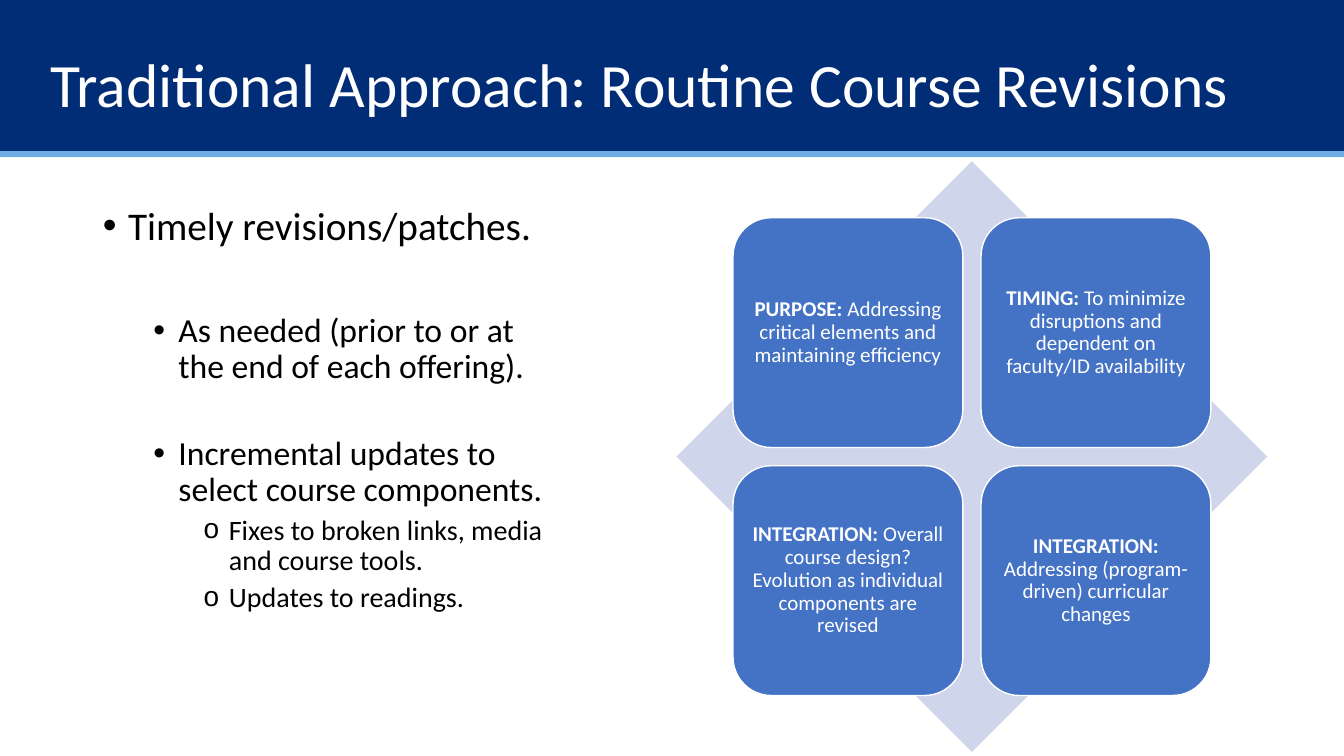
import pptx
import pptx.util
import pptx.dml.color
import pptx.enum.shapes
import pptx.enum.text
import pptx.oxml.ns
from lxml import etree

Inches, Pt = pptx.util.Inches, pptx.util.Pt
SHAPE = pptx.enum.shapes.MSO_SHAPE
ALIGN = pptx.enum.text.PP_ALIGN
ANCHOR = pptx.enum.text.MSO_ANCHOR

COLORS = {
    "navy": "002D75",
    "sky": "6DADE4",
    "diamond": "CFD5EA",
    "card": "4472C4",
    "white": "FFFFFF",
    "black": "000000",
}
TITLE = "Traditional Approach: Routine Course Revisions"
# level, text, space before in points
REVISIONS = [
    (0, "Timely revisions/patches.", 0),
    (1, "As needed (prior to or at the end of each offering).", 46),
    (1, "Incremental updates to select course components.", 36),
    (2, "Fixes to broken links, media and course tools.", 5),
    (2, "Updates to readings.", 5),
]
# size, left margin in inches, bullet for each level
LEVELS = [(28, 0.25, "•"), (24, 0.75, "•"), (20, 1.25, "o")]
HANGING = 0.25
CARDS = [
    ("PURPOSE:", " Addressing critical elements and maintaining efficiency"),
    ("TIMING:", " To minimize disruptions and dependent on faculty/ID availability"),
    ("INTEGRATION:", " Overall course design? Evolution as individual components are revised"),
    ("INTEGRATION:", " Addressing (program-driven) curricular changes"),
]


def color(name):
    return pptx.dml.color.RGBColor.from_string(COLORS[name])


def place(shape, left, top, width, height):
    shape.left, shape.top = Inches(left), Inches(top)
    shape.width, shape.height = Inches(width), Inches(height)


def style(paragraph, size, color_name):
    paragraph.line_spacing = 0.9
    paragraph.font.name = "Calibri"
    paragraph.font.size = Pt(size)
    paragraph.font.color.rgb = color(color_name)


def add_filled(slide, kind, box, fill):
    shape = slide.shapes.add_shape(kind, *map(Inches, box))
    shape.shadow.inherit = False
    shape.fill.solid()
    shape.fill.fore_color.rgb = color(fill)
    shape.line.fill.background()
    return shape


def add_bullet(paragraph, margin, symbol):
    properties = paragraph._p.get_or_add_pPr()
    properties.set("marL", str(Inches(margin)))
    properties.set("indent", str(-Inches(HANGING)))
    bullet = etree.SubElement(properties, pptx.oxml.ns.qn("a:buChar"))
    bullet.set("char", symbol)


def add_banner(slide, left, top, width, height):
    """Draw the header band and its rule behind the placeholders."""
    band = add_filled(slide, SHAPE.RECTANGLE, (left, top, width, height), "navy")
    rule = add_filled(slide, SHAPE.RECTANGLE, (left, top + height, width, 0.06), "sky")
    for back in (rule, band):
        slide.shapes._spTree.insert(2, back._element)


def fill_title(slide, *box):
    title = slide.shapes.title
    place(title, *box)
    frame = title.text_frame
    frame.auto_size = pptx.enum.text.MSO_AUTO_SIZE.NONE
    frame.vertical_anchor = ANCHOR.MIDDLE
    frame.text = TITLE
    frame.paragraphs[0].alignment = ALIGN.LEFT
    style(frame.paragraphs[0], 44, "white")


def fill_revisions(slide, *box):
    body = slide.placeholders[1]
    place(body, *box)
    frame = body.text_frame
    frame.auto_size = pptx.enum.text.MSO_AUTO_SIZE.NONE
    frame.vertical_anchor = ANCHOR.TOP
    for index, (level, text, space_before) in enumerate(REVISIONS):
        paragraph = frame.add_paragraph() if index else frame.paragraphs[0]
        paragraph.text = text
        paragraph.level = level
        size, margin, symbol = LEVELS[level]
        add_bullet(paragraph, margin, symbol)
        paragraph.space_before = Pt(space_before)
        style(paragraph, size, "black")


def add_card(slide, box, heading, detail):
    card = add_filled(slide, SHAPE.ROUNDED_RECTANGLE, box, "card")
    card.line.color.rgb = color("white")
    card.line.width = Pt(1)
    frame = card.text_frame
    frame.word_wrap = True
    frame.vertical_anchor = ANCHOR.MIDDLE
    frame.margin_left = frame.margin_right = Inches(0.06)
    frame.margin_top = frame.margin_bottom = Inches(0.06)
    paragraph = frame.paragraphs[0]
    paragraph.alignment = ALIGN.CENTER
    style(paragraph, 15, "white")
    for text, bold in ((heading, True), (detail, False)):
        run = paragraph.add_run()
        run.text = text
        run.font.bold = bold


def add_matrix(slide, left, top, side):
    """Draw a diamond with a centred two-by-two grid of cards."""
    add_filled(slide, SHAPE.DIAMOND, (left, top, side, side), "diamond")
    card_side, gap = 2.28, 0.18
    inset = (side - 2 * card_side - gap) / 2
    for index, (heading, detail) in enumerate(CARDS):
        row, column = divmod(index, 2)
        card_left = left + inset + column * (card_side + gap)
        card_top = top + inset + row * (card_side + gap)
        add_card(slide, (card_left, card_top, card_side, card_side), heading, detail)


def main():
    deck = pptx.Presentation()
    deck.slide_width, deck.slide_height = Inches(13.33), Inches(7.5)
    slide = deck.slides.add_slide(deck.slide_layouts[1])
    add_banner(slide, 0, 0, 13.33, 1.5)
    fill_title(slide, 0.4, 0.56, 12.16, 0.62)
    fill_revisions(slide, 0.92, 2, 4.7, 4.08)
    add_matrix(slide, 6.71, 1.6, 5.86)
    deck.save("out.pptx")


if __name__ == "__main__":
    main()
